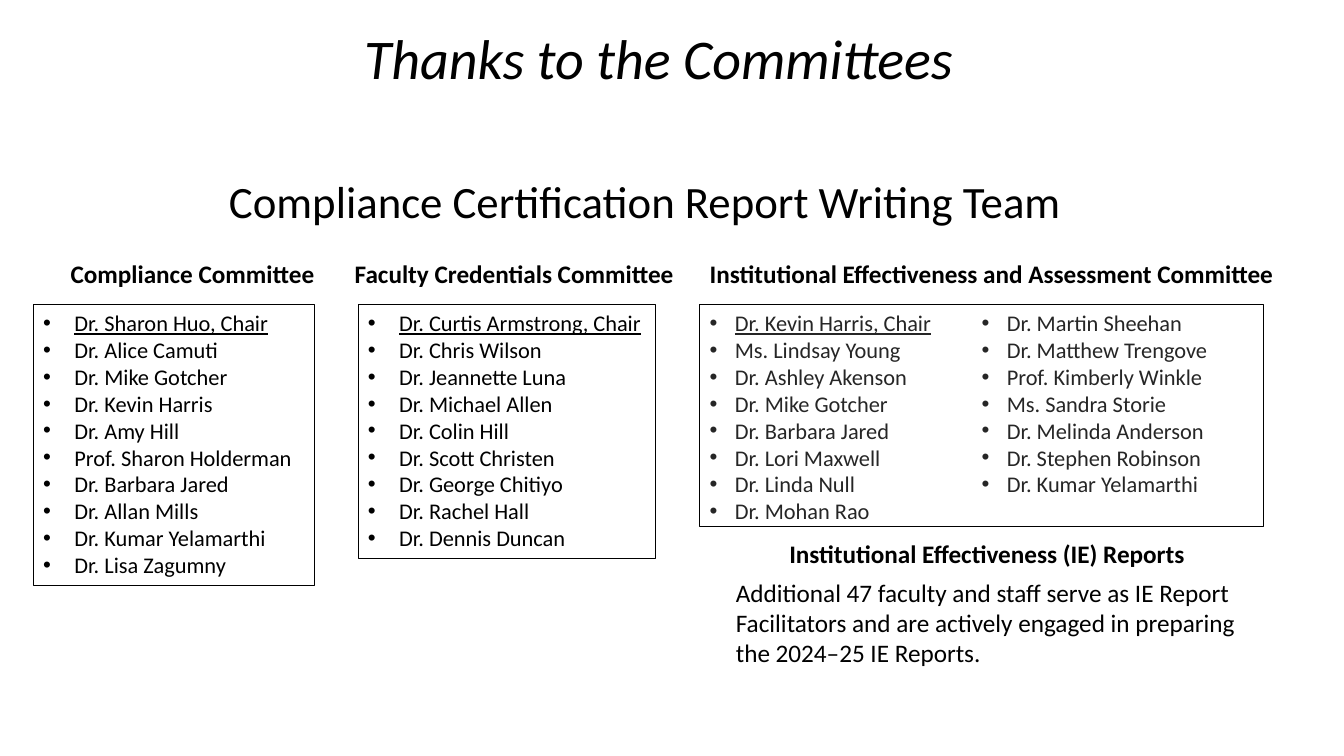
from pptx import Presentation
from pptx.dml.color import RGBColor
from pptx.enum.shapes import MSO_SHAPE
from pptx.enum.text import MSO_ANCHOR, PP_ALIGN
from pptx.oxml.ns import qn
from pptx.util import Inches, Pt
from lxml import etree

RECTANGLE = MSO_SHAPE.RECTANGLE
TOP = MSO_ANCHOR.TOP
LEFT, CENTER = PP_ALIGN.LEFT, PP_ALIGN.CENTER

THEME = {
    "font": "Calibri",
    "black": RGBColor(0x00, 0x00, 0x00),
    "gray": RGBColor(0x26, 0x26, 0x26),
    "title": 40,
    "subtitle": 32,
    "heading": 18,
    "member": 16,
}

# Grid of square cells, ten to the inch
CELL = Inches(0.1)
HEADING_ROW, HEADING_ROWS = 25.1, 4
LIST_ROW = 30.2
MEMBER_ROWS, LIST_PADDING = 2.69, 1

deck = Presentation()
deck.slide_width, deck.slide_height = Inches(13.33), Inches(7.5)
page = deck.slides.add_slide(deck.slide_layouts[6])


def grid(*cells):
    return [round(cell * CELL) for cell in cells]


def add_text(frame, text, size, color=THEME["black"], align=LEFT, bold=False,
             italic=False, underline=False, indent=0, space_before=0):
    """Append a paragraph, bulleted when it has an indent (in inches)."""
    frame.word_wrap = True
    para = frame.paragraphs[0]
    if para.runs:
        para = frame.add_paragraph()
    para.alignment = align
    if space_before:
        para.space_before = Pt(space_before)
    if indent:
        properties = para._p.get_or_add_pPr()
        properties.set("marL", str(Inches(indent)))
        properties.set("indent", str(-Inches(indent)))
        etree.SubElement(properties, qn("a:buFont"), typeface="Arial")
        etree.SubElement(properties, qn("a:buChar"), char="•")
    span = para.add_run()
    span.text = text
    font = span.font
    font.name, font.size, font.color.rgb = THEME["font"], Pt(size), color
    font.bold, font.italic, font.underline = bold, italic, underline


titles = [
    ("Thanks to the Committees", THEME["title"], True, (34.7, 1.8, 61.2, 7.7)),
    ("Compliance Certification Report Writing Team", THEME["subtitle"], False,
     (20.7, 16.7, 86.6, 6.4)),
]
for text, size, italic, place in titles:
    box = page.shapes.add_textbox(*grid(*place))
    add_text(box.text_frame, text, size, align=CENTER, italic=italic)

# The first member of each committee is its chair
committees = [
    {
        "name": "Compliance Committee", "heading": (4.8, 28.6),
        "list": (3.3, 27.9), "columns": 1, "indent": 0.31,
        "line": 0.5, "color": THEME["black"],
        "members": [
            "Dr. Sharon Huo, Chair", "Dr. Alice Camuti", "Dr. Mike Gotcher",
            "Dr. Kevin Harris", "Dr. Amy Hill", "Prof. Sharon Holderman",
            "Dr. Barbara Jared", "Dr. Allan Mills", "Dr. Kumar Yelamarthi",
            "Dr. Lisa Zagumny",
        ],
    },
    {
        "name": "Faculty Credentials Committee", "heading": (33.3, 35.4),
        "list": (35.5, 29.5), "columns": 1, "indent": 0.31,
        "line": 0.5, "color": THEME["black"],
        "members": [
            "Dr. Curtis Armstrong, Chair", "Dr. Chris Wilson",
            "Dr. Jeannette Luna", "Dr. Michael Allen", "Dr. Colin Hill",
            "Dr. Scott Christen", "Dr. George Chitiyo", "Dr. Rachel Hall",
            "Dr. Dennis Duncan",
        ],
    },
    {
        "name": "Institutional Effectiveness and Assessment Committee",
        "heading": (68.8, 59.1), "list": (69.4, 55.9), "columns": 2,
        "indent": 0.25, "line": 0.75, "color": THEME["gray"],
        "members": [
            "Dr. Kevin Harris, Chair", "Ms. Lindsay Young",
            "Dr. Ashley Akenson", "Dr. Mike Gotcher", "Dr. Barbara Jared",
            "Dr. Lori Maxwell", "Dr. Linda Null", "Dr. Mohan Rao",
            "Dr. Martin Sheehan", "Dr. Matthew Trengove",
            "Prof. Kimberly Winkle", "Ms. Sandra Storie",
            "Dr. Melinda Anderson", "Dr. Stephen Robinson",
            "Dr. Kumar Yelamarthi",
        ],
    },
]
for committee in committees:
    left, width = committee["heading"]
    heading = page.shapes.add_textbox(
        *grid(left, HEADING_ROW, width, HEADING_ROWS))
    add_text(heading.text_frame, committee["name"], THEME["heading"],
             align=CENTER, bold=True)

    left, width = committee["list"]
    members = committee["members"]
    height = len(members) * MEMBER_ROWS + LIST_PADDING
    if committee["columns"] > 1:
        height = 22
    box = page.shapes.add_shape(
        RECTANGLE, *grid(left, LIST_ROW, width, height))
    box.shadow.inherit = False
    box.fill.background()
    box.line.color.rgb = THEME["black"]
    box.line.width = Pt(committee["line"])
    frame = box.text_frame
    frame.vertical_anchor = TOP
    if committee["columns"] > 1:
        frame.margin_bottom = 0
        frame._txBody.bodyPr.set("numCol", str(committee["columns"]))
    for position, member in enumerate(members):
        add_text(frame, member, THEME["member"], color=committee["color"],
                 underline=position == 0, indent=committee["indent"])

reports = page.shapes.add_textbox(*grid(72, 52.9, 51.8, 14.5)).text_frame
add_text(reports, "Institutional Effectiveness (IE) Reports",
         THEME["heading"], align=CENTER, bold=True)
add_text(reports,
         "Additional 47 faculty and staff serve as IE Report Facilitators and "
         "are actively engaged in preparing the 2024–25 IE Reports.",
         THEME["heading"], space_before=6)

deck.save("out.pptx")
